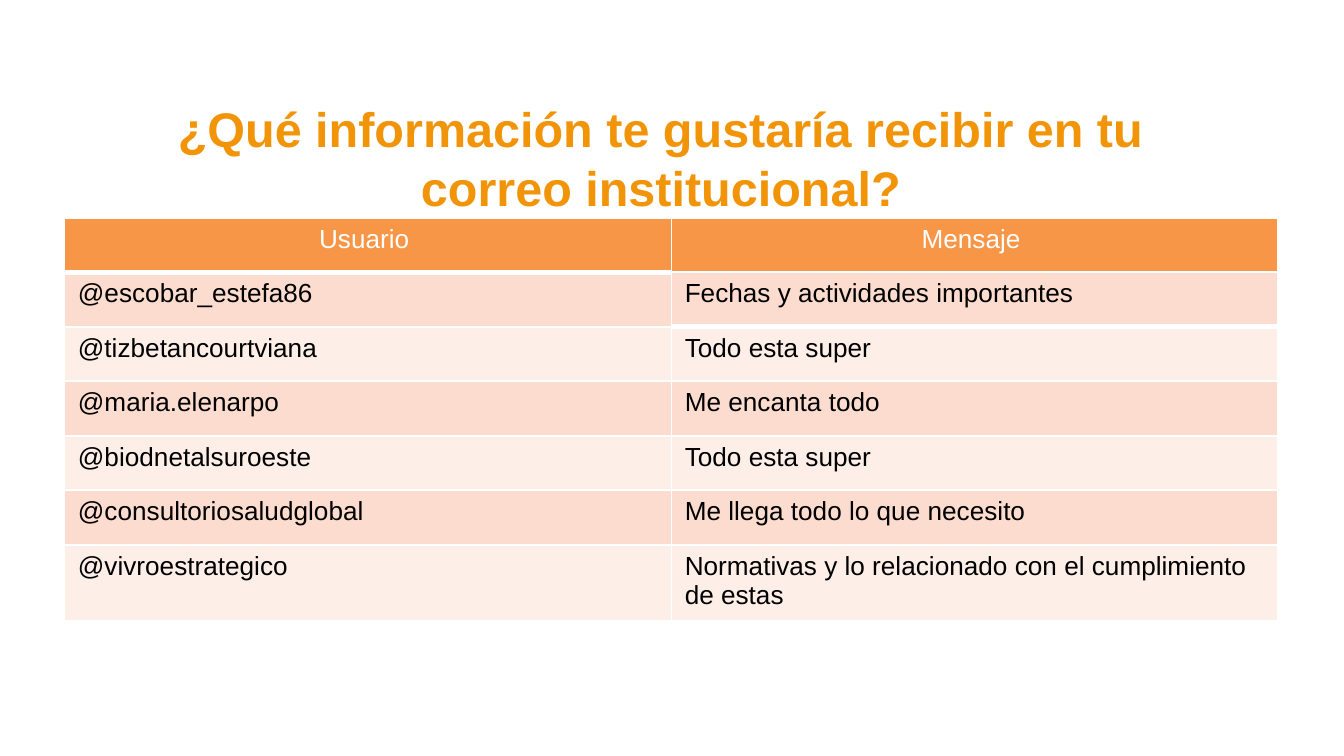
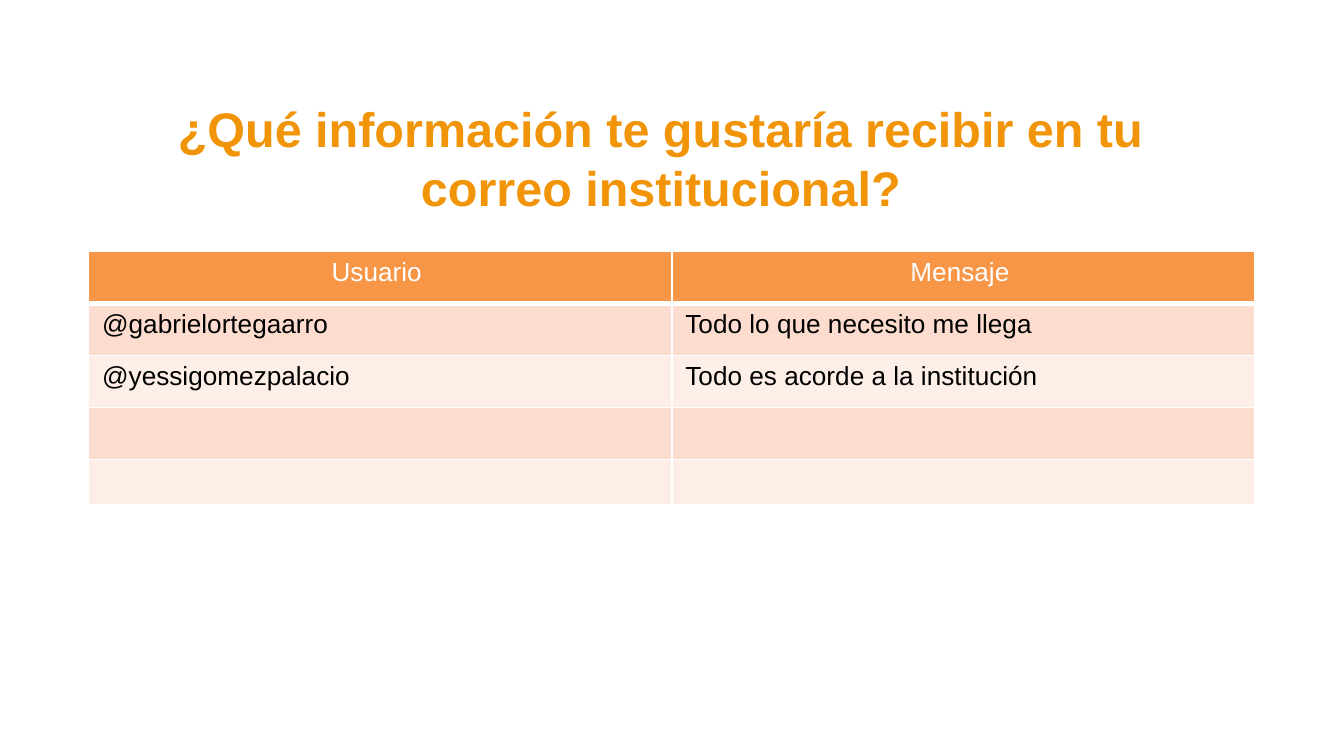
from lxml import etree
from pptx import Presentation
from pptx.dml.color import RGBColor
from pptx.enum import text
from pptx.oxml import ns
from pptx.util import Inches, Pt

# Content
TITLE = ["¿Qué información te gustaría recibir en tu", "correo institucional?"]
HEADER = ("Usuario ", "Mensaje ")
# thick: for each column, the row whose lower edge is a heavy line
PAGES = [
    {
        "left": 0.48, "top": 1.62, "width": 9.03,
        "heights": [2.84 / 7] * 7,
        "thick": (0, 1),
        "rows": [
            ("@escobar_estefa86", "Fechas y actividades importantes"),
            ("@tizbetancourtviana", "Todo esta super"),
            ("@maria.elenarpo", "Me encanta todo"),
            ("@biodnetalsuroeste", "Todo esta super"),
            ("@consultoriosaludglobal", "Me llega todo lo que necesito"),
            ("@vivroestrategico",
             "Normativas y lo relacionado con el cumplimiento de estas"),
        ],
    },
    {
        "left": 0.66, "top": 1.87, "width": 8.68,
        "heights": [1.55 / 4] * 4 + [0.34],
        "thick": (0, 0),
        "rows": [
            ("@gabrielortegaarro", "Todo lo que necesito me llega"),
            ("@yessigomezpalacio", "Todo es acorde a la institución"),
            ("", ""),
            ("", ""),
        ],
    },
]

# Shared style
FONT = "Arial"
COLORS = {
    "title": "F19408", "header": "F79646", "odd": "FCDCCE",
    "even": "FDEEE8", "white": "FFFFFF", "black": "000000",
}


def color(name):
    return RGBColor.from_string(COLORS[name])


def style(para, size, ink, bold=None, centred=False):
    if centred:
        para.alignment = text.PP_ALIGN.CENTER
    font = para.font
    font.name, font.size, font.bold = FONT, Pt(size), bold
    font.color.rgb = color(ink)


def add_title(page):
    box = page.shapes.add_textbox(Inches(0.48), Inches(0.69), Inches(8.88), Inches(1.03))
    frame = box.text_frame
    frame.word_wrap = True
    frame.text = "\n".join(TITLE)
    for para in frame.paragraphs:
        style(para, 26, "title", bold=True, centred=True)


def set_borders(cell, top, bottom):
    props = cell._tc.get_or_add_tcPr()
    edges = (("lnL", 1), ("lnR", 1), ("lnT", top), ("lnB", bottom))
    for place, (tag, width) in enumerate(edges):
        line = etree.Element(ns.qn("a:" + tag), w=str(Pt(width)))
        fill = etree.SubElement(line, ns.qn("a:solidFill"))
        etree.SubElement(fill, ns.qn("a:srgbClr"), val=COLORS["white"])
        props.insert(place, line)


def fill_cell(cell, words, row, thick_row):
    cell.text = words
    para = cell.text_frame.paragraphs[0]
    if row == 0:  # the table style makes the header row bold
        style(para, 14, "white", centred=True)
    else:
        style(para, 14, "black", bold=False)
    if not words:  # keeps an empty row as low as its text size allows
        etree.SubElement(para._p, ns.qn("a:endParaRPr"), sz="1400")
    cell.fill.solid()
    cell.fill.fore_color.rgb = color("header" if row == 0 else "odd" if row % 2 else "even")
    set_borders(cell, 3 if row == thick_row + 1 else 1, 3 if row == thick_row else 1)


def add_answers(page, answers):
    rows = [HEADER] + answers["rows"]
    table = page.shapes.add_table(
        len(rows), len(HEADER), Inches(answers["left"]), Inches(answers["top"]),
        Inches(answers["width"]), Inches(sum(answers["heights"]))).table
    for row, (words, height) in enumerate(zip(rows, answers["heights"])):
        table.rows[row].height = Inches(height)
        for col, word in enumerate(words):
            fill_cell(table.cell(row, col), word, row, answers["thick"][col])


def main():
    deck = Presentation()
    deck.slide_width, deck.slide_height = Inches(10), Inches(10 * 9 / 16)
    for answers in PAGES:
        page = deck.slides.add_slide(deck.slide_layouts[6])
        add_title(page)
        add_answers(page, answers)
    deck.save("out.pptx")


if __name__ == "__main__":
    main()
